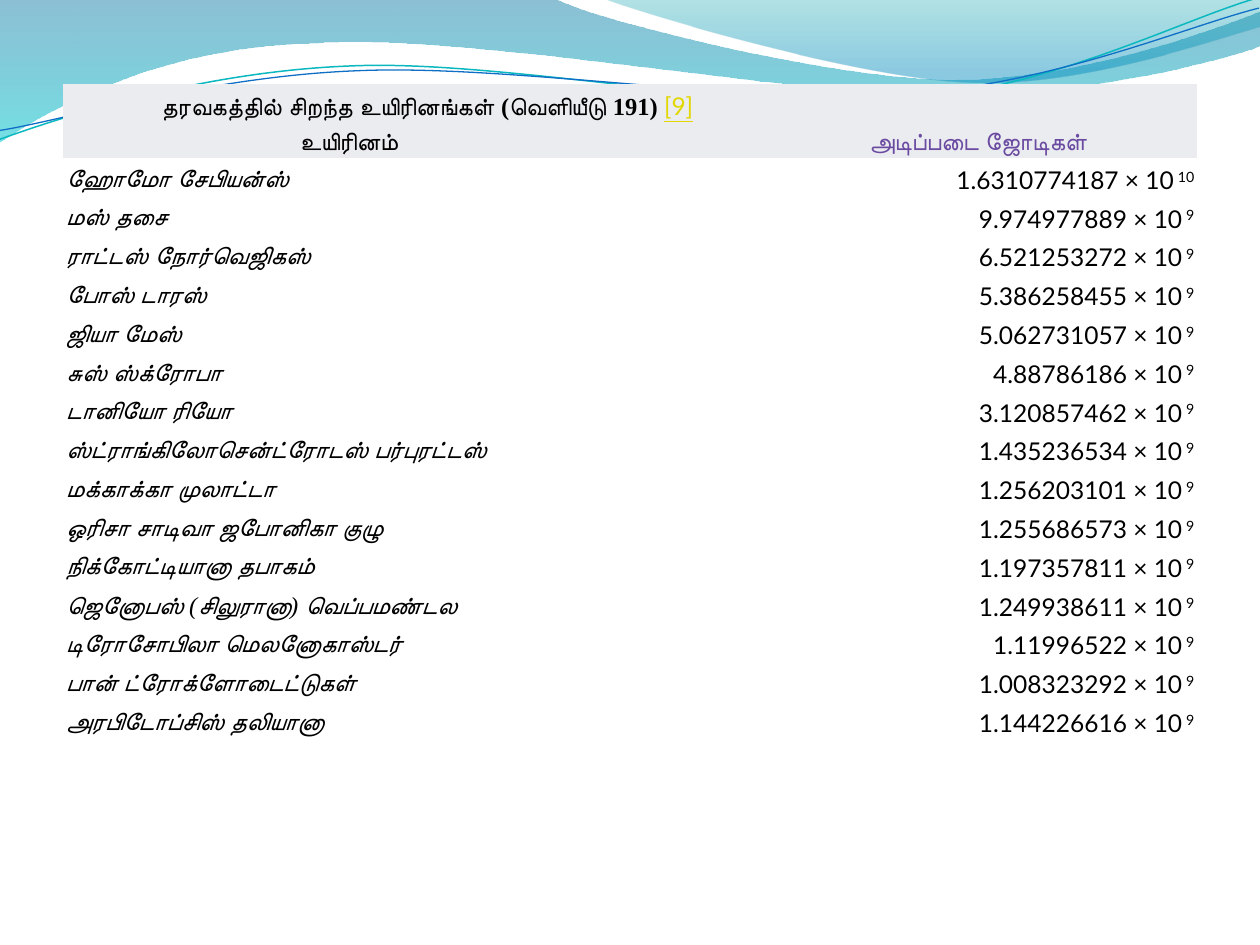
from lxml import etree
from pptx import Presentation, util as u
from pptx.dml.color import RGBColor
from pptx.enum import text
from pptx.oxml.ns import qn

INCH = 2.54  # centimetres
NO_STYLE = "{2D5ABB26-0587-4C30-8999-92F81FD0307C}"
LEFT, CENTER, RIGHT = text.PP_ALIGN.LEFT, text.PP_ALIGN.CENTER, text.PP_ALIGN.RIGHT
BLACK, PURPLE, YELLOW, HEADER_GREY = "000000", "6B4BA1", "E2D700", "EAECF0"
ROWS = 22

# Wave outlines in inches: three points make a curve, one point a straight line
LARGE_WAVE = [
    [(0, 0)], [(4.4, -0.01)],
    [(4.76, 0.17), (6.64, 0.63), (7.58, 0.63)],
    [(8.53, 0.63), (9.58, 0.26), (10, 0.09)],
    [(10.01, 0.36)],
    [(9.83, 0.44), (8.7, 0.76), (7.46, 0.75)],
    [(6.22, 0.75), (3.82, 0.28), (2.57, 0.34)],
    [(1.29, 0.36), (0.46, 0.83), (-0.01, 1.13)],
]
RIGHT_WAVE = [
    [(4.79, -0.01)],
    [(5.09, 0.11), (6.82, 0.62), (7.69, 0.65)],
    [(8.56, 0.69), (9.61, 0.32), (10, 0.21)],
    [(10, 0)],
]
TEAL_CURVE = [
    [(-0.02, 0.87)],
    [(0.47, 0.72), (1.58, 0.41), (2.78, 0.42)],
    [(3.96, 0.42), (5.91, 0.93), (7.12, 0.9)],
    [(8.32, 0.87), (9.4, 0.36), (10, 0.22)],
]
BLUE_CURVE = [
    [(-0.02, 0.8)],
    [(0.46, 0.75), (1.64, 0.45), (2.83, 0.46)],
    [(4.03, 0.46), (5.96, 0.88), (7.16, 0.85)],
    [(8.35, 0.83), (9.42, 0.42), (10.01, 0.3)],
]

# Species, mantissa and exponent of the base pairs
SPECIES = [
    ("ஹோமோ சேபியன்ஸ்", "1.6310774187", 10),
    ("மஸ் தசை", "9.974977889", 9),
    ("ராட்டஸ் நோர்வெஜிகஸ்", "6.521253272", 9),
    ("போஸ் டாரஸ்", "5.386258455", 9),
    ("ஜியா மேஸ்", "5.062731057", 9),
    ("சுஸ் ஸ்க்ரோபா", "4.88786186", 9),
    ("டானியோ ரியோ", "3.120857462", 9),
    ("ஸ்ட்ராங்கிலோசென்ட்ரோடஸ் பர்புரட்டஸ்", "1.435236534", 9),
    ("மக்காக்கா முலாட்டா", "1.256203101", 9),
    ("ஒரிசா சாடிவா ஜபோனிகா குழு", "1.255686573", 9),
    ("நிக்கோட்டியானா தபாகம்", "1.197357811", 9),
    ("ஜெனோபஸ்| (|சிலுரானா|) |வெப்பமண்டல", "1.249938611", 9),
    ("டிரோசோபிலா மெலனோகாஸ்டர்", "1.11996522", 9),
    ("பான் ட்ரோக்ளோடைட்டுகள்", "1.008323292", 9),
    ("அரபிடோப்சிஸ் தலியானா", "1.144226616", 9),
]


def color(value):
    return RGBColor.from_string(value)


def add_wave(page, segments, closed=False):
    """Draw an outline, turning each three-point segment into a Bezier curve."""
    points = [(u.Cm(x * INCH), u.Cm(y * INCH)) for part in segments for x, y in part]
    builder = page.shapes.build_freeform(*points[0])
    builder.add_line_segments(points[1:], close=closed)
    wave = builder.convert_to_shape()
    wave.shadow.inherit = False
    lines = iter(list(wave.element.iter(qn("a:lnTo"))))
    for part in segments[1:]:
        first = next(lines)
        if len(part) == 3:
            curve = etree.Element(qn("a:cubicBezTo"))
            first.addprevious(curve)
            for line in (first, next(lines), next(lines)):
                curve.append(line[0])
                line.getparent().remove(line)
    return wave


def add_filled_wave(page, segments, stops):
    wave = add_wave(page, segments, closed=True)
    wave.line.fill.background()
    wave.fill.gradient()
    wave.fill.gradient_angle = 270
    for stop, (position, tint, _) in zip(wave.fill.gradient_stops, stops):
        stop.position = position
        stop.color.rgb = color(tint)
    for node, (_, _, opacity) in zip(wave.element.spPr.iter(qn("a:srgbClr")), stops):
        etree.SubElement(node, qn("a:alpha")).set("val", str(opacity * 1000))


def add_line_wave(page, segments, tint, width):
    wave = add_wave(page, segments)
    wave.rotation = 357.3
    wave.fill.background()
    wave.line.color.rgb = color(tint)
    wave.line.width = u.Pt(width)


def add_span(para, words, font="Arial", tint=BLACK, bold=False, italic=False):
    span = para.add_run()
    span.text = words
    span.font.name, span.font.size = font, u.Pt(14)
    span.font.bold, span.font.italic = bold, italic
    span.font.color.rgb = color(tint)
    return span


def add_mixed(para, words, **style):
    """Alternate Tamil and Latin parts, which are separated by bars."""
    for index, part in enumerate(words.split("|")):
        add_span(para, part, "Times New Roman" if index % 2 else "Arial", **style)


def start_cell(cell, align=LEFT, indent=0):
    cell.margin_left = u.Cm(0.05 + indent)
    cell.margin_right = cell.margin_top = cell.margin_bottom = u.Cm(0.05)
    cell.vertical_anchor = text.MSO_ANCHOR.MIDDLE
    para = cell.text_frame.paragraphs[0]
    para.alignment, para.line_spacing = align, 1.15
    return para


def add_species_table(page):
    frame = page.shapes.add_table(ROWS, 2, u.Cm(1.27), u.Cm(1.7), u.Cm(22.86), u.Cm(0.71 * ROWS))
    table = frame.table
    table.first_row = table.horz_banding = False
    next(frame.element.iter(qn("a:tableStyleId"))).text = NO_STYLE
    for column, width in zip(table.columns, (11.53, 11.33)):
        column.width = u.Cm(width)
    for index, row in enumerate(table.rows):
        row.height = u.Cm(0.71)
        for cell in row.cells:
            if index < 2:
                cell.fill.solid()
                cell.fill.fore_color.rgb = color(HEADER_GREY)
            else:
                cell.fill.background()

    # Header rows
    table.cell(0, 0).merge(table.cell(0, 1))
    para = start_cell(table.cell(0, 0), indent=1.94)
    add_mixed(para, "தரவகத்தில் சிறந்த உயிரினங்கள்| (|வெளியீடு| 191) ", bold=True)
    add_span(para, "[9]", "Lato", YELLOW).font.underline = True
    add_span(start_cell(table.cell(1, 0), CENTER), "உயிரினம்", bold=True)
    add_span(start_cell(table.cell(1, 1), CENTER, 2.5), "அடிப்படை ஜோடிகள்", tint=PURPLE, bold=True)

    # Species rows
    for index, (name, mantissa, exponent) in enumerate(SPECIES, 2):
        add_mixed(start_cell(table.cell(index, 0)), name, italic=True)
        para = start_cell(table.cell(index, 1), RIGHT)
        add_span(para, f"{mantissa} × 10", "Lato")
        power = add_span(para, f" {exponent}", "Lato")
        power.font._element.set("baseline", "30000")

    # Empty rows at the foot stay low
    for index in range(len(SPECIES) + 2, ROWS):
        for cell in table.rows[index].cells:
            start_cell(cell).line_spacing = 0.8


def main():
    deck = Presentation()
    deck.slide_width, deck.slide_height = u.Cm(25.4), u.Cm(19.05)
    page = deck.slides.add_slide(deck.slide_layouts[6])

    # Waves along the top
    add_filled_wave(page, LARGE_WAVE, [(0, "0074A1", 45), (1, "00C6CF", 55)])
    add_filled_wave(page, RIGHT_WAVE, [(0, "00A1A9", 30), (0.8, "008BBF", 45)])
    add_line_wave(page, TEAL_CURVE, "0AB8BF", 0.85)
    add_line_wave(page, BLUE_CURVE, "0F6FC6", 0.75)

    add_species_table(page)
    deck.save("out.pptx")


if __name__ == "__main__":
    main()
